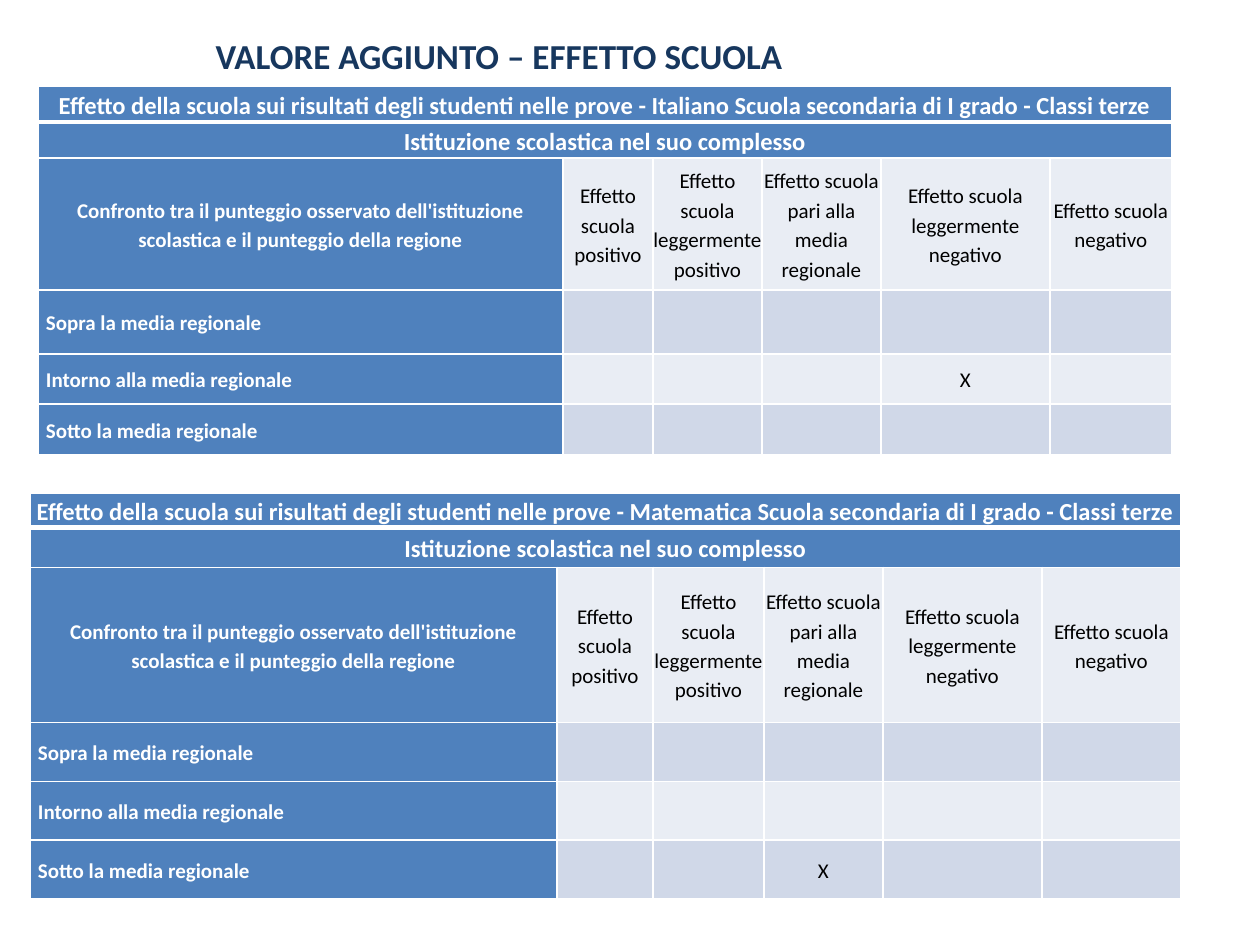
from dataclasses import dataclass

from lxml import etree
from pptx import Presentation
from pptx.dml.color import RGBColor
from pptx.enum.text import MSO_ANCHOR, MSO_AUTO_SIZE, PP_ALIGN
from pptx.oxml.ns import qn
from pptx.util import Emu, Pt

LEFT, CENTER = PP_ALIGN.LEFT, PP_ALIGN.CENTER
MIDDLE = MSO_ANCHOR.MIDDLE
FIXED = MSO_AUTO_SIZE.NONE

NAVY = RGBColor(0x17, 0x37, 0x5E)
BLUE = RGBColor(0x4F, 0x81, 0xBD)
PALE = RGBColor(0xE9, 0xED, 0xF4)
MID = RGBColor(0xD0, 0xD8, 0xE8)
WHITE = RGBColor(0xFF, 0xFF, 0xFF)
BLACK = RGBColor(0, 0, 0)

FONT = "Calibri"
SCALE = 914400 / 126  # EMU in one px
PAD = 8

WHOLE = "Istituzione scolastica nel suo complesso"
HEADS = [
    "Confronto tra il punteggio osservato dell'istituzione scolastica"
    " e il punteggio della regione",
    "Effetto scuola positivo",
    "Effetto scuola leggermente positivo",
    "Effetto scuola pari alla media regionale",
    "Effetto scuola leggermente negativo",
    "Effetto scuola negativo",
]
LEVELS = [
    "Sopra la media regionale",
    "Intorno alla media regionale",
    "Sotto la media regionale",
]


@dataclass
class Grid:
    subject: str
    left: int
    top: int
    cols: list[int]
    rows: list[int]
    mark: tuple[int, int]  # row and column of the X


GRIDS = [
    Grid("Italiano", 38, 86, [525, 90, 109, 119, 169, 122],
         [36, 36, 132, 64, 50, 51], (4, 4)),
    Grid("Matematica", 30, 493, [527, 96, 111, 119, 159, 139],
         [34, 40, 155, 59, 59, 59], (5, 3)),
]


def px(size: int) -> Emu:
    return Emu(round(size * SCALE))


def write(frame, text: str, *, size: int = 12, color=WHITE, bold=True,
          align=CENTER, space=1.15) -> None:
    para = frame.paragraphs[0]
    para.alignment = align
    para.line_spacing = space
    run = para.add_run()
    run.text = text
    font = run.font
    font.name, font.size, font.bold = FONT, Pt(size), bold
    font.color.rgb = color


def edge(cell, side: str, width: int) -> None:
    """Add one white border; python-pptx has no method for it."""
    line = etree.SubElement(cell._tc.get_or_add_tcPr(), qn(f"a:ln{side}"),
                            w=str(Pt(width)))
    fill = etree.SubElement(line, qn("a:solidFill"))
    etree.SubElement(fill, qn("a:srgbClr"), val=str(WHITE))


def style(cell, row: int, col: int) -> None:
    thick = {(0, "B"), (1, "T")}
    for side in "LRTB":
        edge(cell, side, 3 if (row, side) in thick else 1)
    cell.fill.solid()
    if row < 2 or col == 0:
        cell.fill.fore_color.rgb = BLUE
    else:
        cell.fill.fore_color.rgb = MID if row % 2 else PALE
    pad = px(PAD if row > 2 and col == 0 else 0)
    cell.margin_left = cell.margin_right = pad
    cell.margin_top = cell.margin_bottom = pad
    cell.vertical_anchor = MIDDLE


def draw(slide, grid: Grid) -> None:
    table = slide.shapes.add_table(
        len(grid.rows), len(grid.cols), px(grid.left), px(grid.top),
        px(sum(grid.cols)), px(sum(grid.rows))).table
    table.first_row = table.horz_banding = False
    for part, width in zip(table.columns, grid.cols):
        part.width = px(width)
    for part, height in zip(table.rows, grid.rows):
        part.height = px(height)
    for r in range(len(grid.rows)):
        for c in range(len(grid.cols)):
            style(table.cell(r, c), r, c)

    # Two bands across the full width
    name = ("Effetto della scuola sui risultati degli studenti nelle prove - "
            f"{grid.subject} Scuola secondaria di I grado - Classi terze")
    for r, text in enumerate([name, WHOLE]):
        cell = table.cell(r, 0)
        cell.merge(table.cell(r, len(grid.cols) - 1))
        write(cell.text_frame, text, size=14)

    # Column heads, row heads and the mark
    for c, text in enumerate(HEADS):
        write(table.cell(2, c).text_frame, text,
              color=BLACK if c else WHITE, bold=c == 0)
    for r, text in enumerate(LEVELS, 3):
        write(table.cell(r, 0).text_frame, text, align=LEFT)
    write(table.cell(*grid.mark).text_frame, "X", color=BLACK, bold=False)


def main() -> None:
    deck = Presentation()
    deck.slide_width, deck.slide_height = px(1260), px(945)
    slide = deck.slides.add_slide(deck.slide_layouts[5])

    # Title
    title = slide.shapes.title
    title.left, title.top = px(203), px(28)
    title.width, title.height = px(804), px(55)
    title.text_frame.auto_size = FIXED
    write(title.text_frame, "VALORE AGGIUNTO – EFFETTO SCUOLA",
          size=20, color=NAVY, align=LEFT, space=1.0)

    # Tables
    for grid in GRIDS:
        draw(slide, grid)
    deck.save("out.pptx")


if __name__ == "__main__":
    main()
